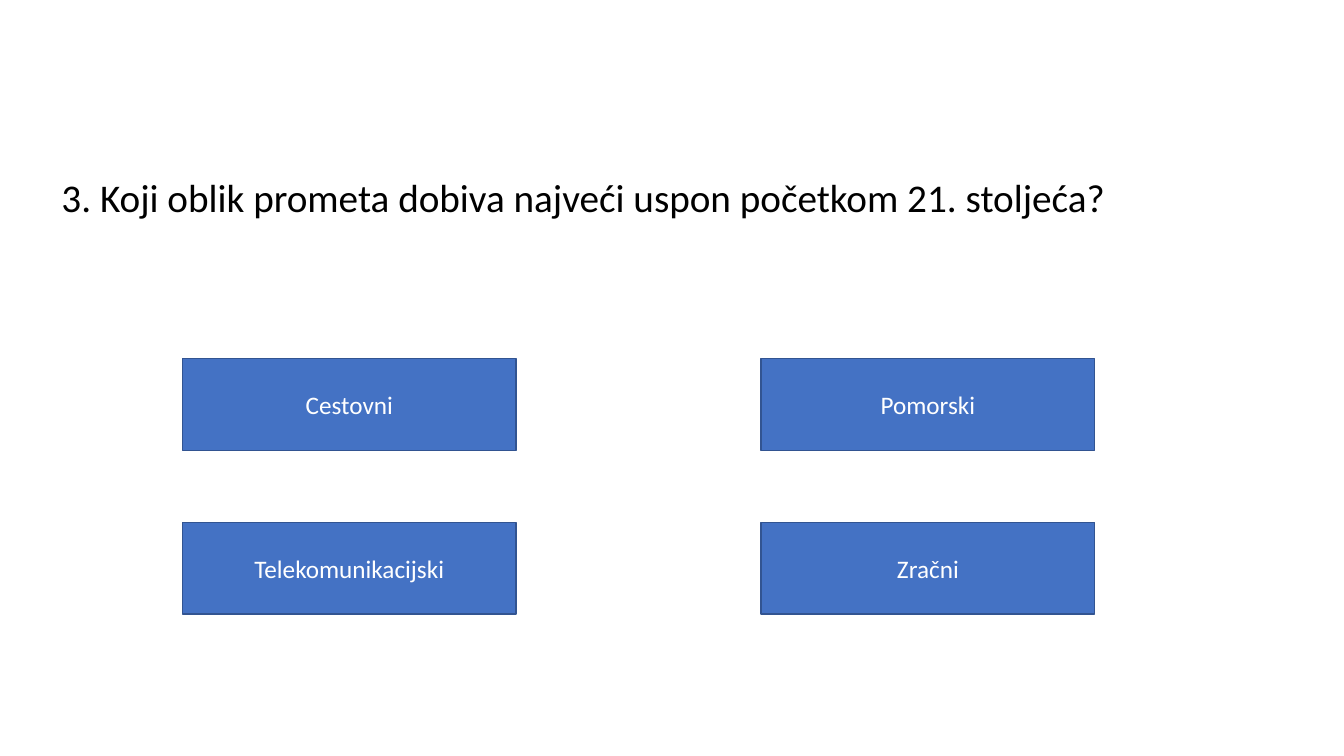
from pptx import Presentation
from pptx.dml.color import RGBColor
from pptx.enum.shapes import MSO_SHAPE as Shape
from pptx.enum.text import MSO_ANCHOR as Anchor, MSO_AUTO_SIZE as AutoSize, PP_ALIGN as Align
from pptx.util import Cm, Pt

QUESTION = "3. Koji oblik prometa dobiva najveći uspon početkom 21. stoljeća?"
ANSWERS = [["Cestovni", "Pomorski"], ["Telekomunikacijski", "Zračni"]]
BUTTON_WIDTH, BUTTON_HEIGHT = 8.41, 2.31


def color(value):
    return RGBColor.from_string(value)


def write(frame, text, *, size, fill, align=Align.LEFT, anchor=Anchor.TOP):
    frame.word_wrap = True
    frame.vertical_anchor = anchor
    para = frame.paragraphs[0]
    para.alignment = align
    span = para.add_run()
    span.text = text
    span.font.name = "Calibri"
    span.font.size = Pt(size)
    span.font.color.rgb = color(fill)


def add_question(page, text, left, top, width, height):
    box = page.shapes.add_textbox(Cm(left), Cm(top), Cm(width), Cm(height))
    write(box.text_frame, text, size=28, fill="000000")
    box.text_frame.auto_size = AutoSize.SHAPE_TO_FIT_TEXT


def add_button(page, text, left, top):
    button = page.shapes.add_shape(
        Shape.RECTANGLE, Cm(left), Cm(top), Cm(BUTTON_WIDTH), Cm(BUTTON_HEIGHT))
    button.shadow.inherit = False
    button.fill.solid()
    button.fill.fore_color.rgb = color("4472C4")
    button.line.color.rgb = color("325491")
    button.line.width = Pt(1)
    write(button.text_frame, text, size=18, fill="FFFFFF",
          align=Align.CENTER, anchor=Anchor.MIDDLE)


def add_answers(page, answers, left, top, width, height):
    # Spread the buttons so the outer ones touch the edges of the box
    column_step = (width - BUTTON_WIDTH) / (len(answers[0]) - 1)
    row_step = (height - BUTTON_HEIGHT) / (len(answers) - 1)
    for row, texts in enumerate(answers):
        for column, text in enumerate(texts):
            add_button(page, text, left + column * column_step, top + row * row_step)


def main():
    deck = Presentation()
    deck.slide_width, deck.slide_height = Cm(33.87), Cm(19.05)
    page = deck.slides.add_slide(deck.slide_layouts[6])

    # Question above, answer grid below
    add_question(page, QUESTION, 1.3, 4.24, 31.65, 1.45)
    add_answers(page, ANSWERS, 4.6, 9.04, 22.99, 6.43)

    deck.save("out.pptx")


if __name__ == "__main__":
    main()
